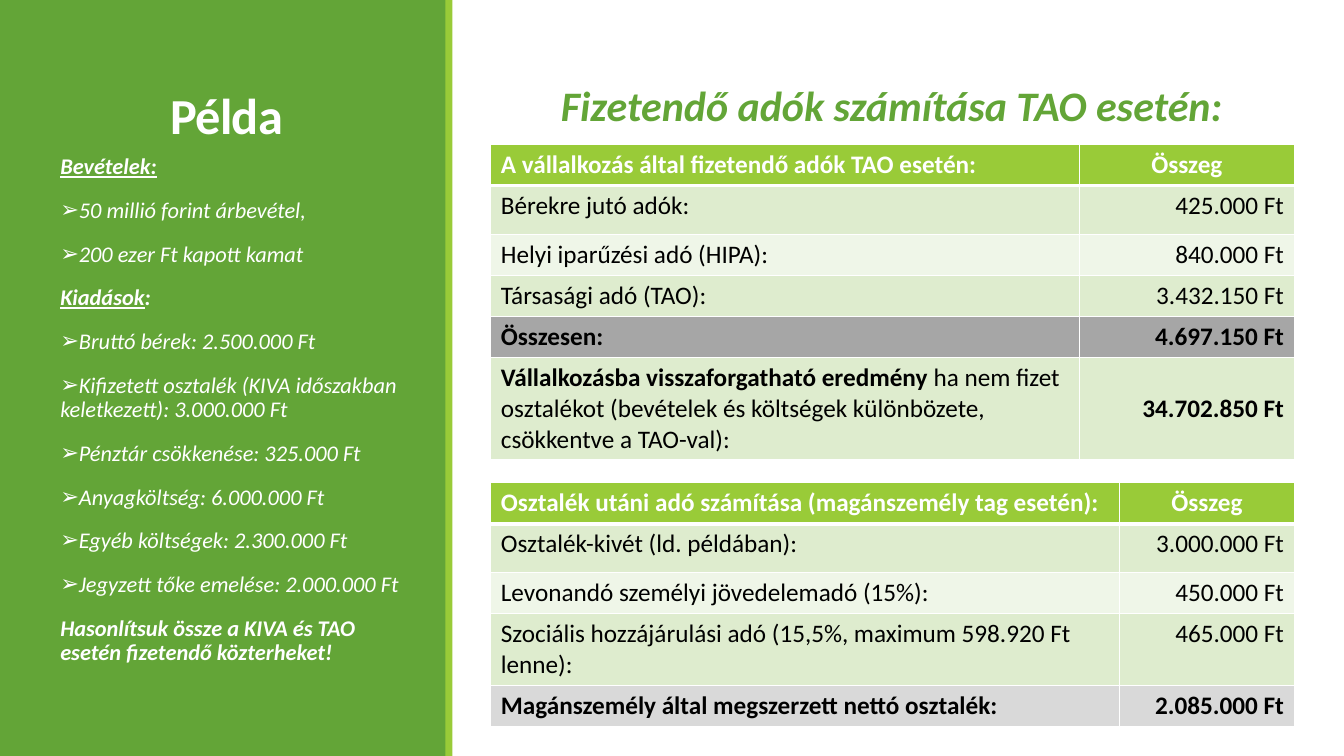
from dataclasses import dataclass

from lxml import etree
from pptx import Presentation
from pptx.dml.color import RGBColor
from pptx.enum.shapes import MSO_SHAPE
from pptx.enum.text import MSO_ANCHOR as Anchor, PP_ALIGN as Align
from pptx.oxml.ns import qn
from pptx.util import Pt


@dataclass(frozen=True)
class Theme:
    font: str = "Calibri"
    green: str = "63A537"
    lime: str = "99CB38"
    white: str = "FFFFFF"
    black: str = "000000"
    band_dark: str = "DEECCE"
    band_light: str = "EFF6E8"
    total_dark: str = "A6A6A6"
    total_light: str = "D9D9D9"
    title_size: float = 36
    heading_size: float = 30
    table_size: float = 18
    sidebar_size: float = 16


THEME = Theme()
TABLE_LEFT, TABLE_WIDTH = 350.6, 573.8
ROW, TALL_ROW = 29.3, 35

# Sidebar paragraphs: runs of (text, format), and whether the line has a bullet
HEAD = {"bold": True, "underline": True}
SIDEBAR = [
    ([("Bevételek:", HEAD)], False),
    ([("50 millió forint árbevétel,", {})], True),
    ([("200 ezer Ft kapott kamat", {})], True),
    ([("Kiadások", HEAD), (":", {"bold": True})], False),
    ([("Bruttó bérek: 2.500.000 Ft", {})], True),
    ([("Kifizetett osztalék (KIVA időszakban keletkezett): 3.000.000 Ft", {})], True),
    ([("Pénztár csökkenése: 325.000 Ft", {})], True),
    ([("Anyagköltség: 6.000.000 Ft", {})], True),
    ([("Egyéb költségek: 2.300.000 Ft", {})], True),
    ([("Jegyzett tőke emelése: 2.000.000 Ft", {})], True),
    ([("Hasonlítsuk össze a KIVA és TAO esetén fizetendő közterheket!",
       {"bold": True})], False),
]

# Table rows: label, amount, height, fill, bold
COMPANY_TAXES = [
    ("Bérekre jutó adók:", "425.000 Ft", TALL_ROW, THEME.band_dark, False),
    ("Helyi iparűzési adó (HIPA):", "840.000 Ft", ROW, THEME.band_light, False),
    ("Társasági adó (TAO):", "3.432.150 Ft", ROW, THEME.band_dark, False),
    ("Összesen:", "4.697.150 Ft", ROW, THEME.total_dark, True),
    ([("Vállalkozásba visszaforgatható eredmény ", {}),
      ("ha nem fizet osztalékot (bevételek és költségek különbözete, "
       "csökkentve a TAO-val):", {"bold": False})],
     "34.702.850 Ft", 73, THEME.band_dark, True),
]
DIVIDEND_TAXES = [
    ("Osztalék-kivét (ld. példában):", "3.000.000 Ft", TALL_ROW, THEME.band_dark, False),
    ("Levonandó személyi jövedelemadó (15%):", "450.000 Ft", ROW, THEME.band_light, False),
    ("Szociális hozzájárulási adó (15,5%, maximum 598.920 Ft lenne):",
     "465.000 Ft", 51, THEME.band_dark, False),
    ("Magánszemély által megszerzett nettó osztalék:", "2.085.000 Ft", ROW,
     THEME.total_light, True),
]


def write_text(paragraph, text, *, size, color, bold=False, italic=False,
               underline=False, align=Align.LEFT, line_spacing=None,
               before=0, after=0, tracking=None):
    """Write a string, or a list of (text, format) runs, into a paragraph."""
    paragraph.alignment = align
    paragraph.space_before, paragraph.space_after = Pt(before), Pt(after)
    if line_spacing:
        paragraph.line_spacing = line_spacing
    for content, changes in [(text, {})] if isinstance(text, str) else text:
        run = paragraph.add_run()
        run.text = content
        font = run.font
        font.name, font.size = THEME.font, Pt(size)
        font.color.rgb = RGBColor.from_string(color)
        font.bold = changes.get("bold", bold)
        font.italic = changes.get("italic", italic)
        font.underline = changes.get("underline", underline)
        if tracking is not None:
            run._r.get_or_add_rPr().set("spc", str(int(tracking * 100)))


def add_bar(slide, left, width, color):
    bar = slide.shapes.add_shape(MSO_SHAPE.RECTANGLE, Pt(left), 0, Pt(width), Pt(540))
    bar.shadow.inherit = False
    bar.fill.solid()
    bar.fill.fore_color.rgb = RGBColor.from_string(color)
    bar.line.fill.background()


def add_text_frame(slide, left, top, width, height, anchor=Anchor.TOP):
    box = slide.shapes.add_textbox(Pt(left), Pt(top), Pt(width), Pt(height))
    frame = box.text_frame
    frame.word_wrap = True
    frame.vertical_anchor = anchor
    return frame


def add_bullet(paragraph, color):
    properties = paragraph._p.get_or_add_pPr()
    properties.set("marL", "0")
    properties.set("indent", "0")
    bullet_color = etree.SubElement(properties, qn("a:buClr"))
    etree.SubElement(bullet_color, qn("a:srgbClr"), val=color)
    etree.SubElement(properties, qn("a:buFont"), typeface="Arial")
    etree.SubElement(properties, qn("a:buChar"), char="➢")


def add_sidebar_text(slide):
    frame = add_text_frame(slide, 36, 107.3, 261.4, 389)
    for index, (runs, bulleted) in enumerate(SIDEBAR):
        paragraph = frame.add_paragraph() if index else frame.paragraphs[0]
        write_text(paragraph, runs, size=THEME.sidebar_size, color=THEME.white,
                   italic=True, line_spacing=0.9, before=12, after=2)
        if bulleted:
            add_bullet(paragraph, THEME.white)


def set_borders(cell, top, bottom):
    properties = cell._tc.get_or_add_tcPr()
    widths = {"a:lnL": 1, "a:lnR": 1, "a:lnT": top, "a:lnB": bottom}
    for index, (tag, width) in enumerate(widths.items()):
        line = etree.Element(qn(tag), w=str(Pt(width)))
        fill = etree.SubElement(line, qn("a:solidFill"))
        etree.SubElement(fill, qn("a:srgbClr"), val=THEME.white)
        properties.insert(index, line)


def add_tax_table(slide, top, label_width, heading, entries):
    rows = [(heading, "Összeg", ROW, THEME.lime, True), *entries]
    height = sum(row[2] for row in rows)
    table = slide.shapes.add_table(len(rows), 2, Pt(TABLE_LEFT), Pt(top),
                                   Pt(TABLE_WIDTH), Pt(height)).table
    table.columns[0].width = Pt(label_width)
    table.columns[1].width = Pt(TABLE_WIDTH - label_width)
    for index, (label, amount, row_height, fill, bold) in enumerate(rows):
        table.rows[index].height = Pt(row_height)
        is_header = index == 0
        amount_align = Align.CENTER if is_header else Align.RIGHT
        for column, (text, align) in enumerate([(label, Align.LEFT),
                                                (amount, amount_align)]):
            cell = table.cell(index, column)
            cell.fill.solid()
            cell.fill.fore_color.rgb = RGBColor.from_string(fill)
            set_borders(cell, top=3 if index == 1 else 1, bottom=3 if is_header else 1)
            write_text(cell.text_frame.paragraphs[0], text, size=THEME.table_size,
                       color=THEME.white if is_header else THEME.black,
                       bold=bold, align=align)
    return table


def main():
    presentation = Presentation()
    presentation.slide_width, presentation.slide_height = Pt(960), Pt(540)
    slide = presentation.slides.add_slide(presentation.slide_layouts[6])

    # Sidebar
    add_bar(slide, 0, 319, THEME.green)
    add_bar(slide, 318.2, 5, THEME.lime)
    title = add_text_frame(slide, 36, 46.8, 252, 60.5, Anchor.BOTTOM)
    write_text(title.paragraphs[0], "Példa", size=THEME.title_size, color=THEME.white,
               bold=True, align=Align.CENTER, line_spacing=0.85, tracking=-0.5)
    add_sidebar_text(slide)

    # Heading above the tables
    heading = add_text_frame(slide, 378, 57.6, 511.2, 42)
    heading.margin_left, heading.margin_right = Pt(7.2), 0
    write_text(heading.paragraphs[0], "Fizetendő adók számítása TAO esetén:",
               size=THEME.heading_size, color=THEME.green, bold=True, italic=True,
               align=Align.CENTER, line_spacing=0.9, before=12, after=2)

    # Tax tables
    add_tax_table(slide, 344.9, 449.3,
                  "Osztalék utáni adó számítása (magánszemély tag esetén):", DIVIDEND_TAXES)
    company = add_tax_table(slide, 103.2, 420.5,
                            "A vállalkozás által fizetendő adók TAO esetén:", COMPANY_TAXES)
    company.cell(len(COMPANY_TAXES), 1).vertical_anchor = Anchor.MIDDLE

    presentation.save("out.pptx")


if __name__ == "__main__":
    main()
